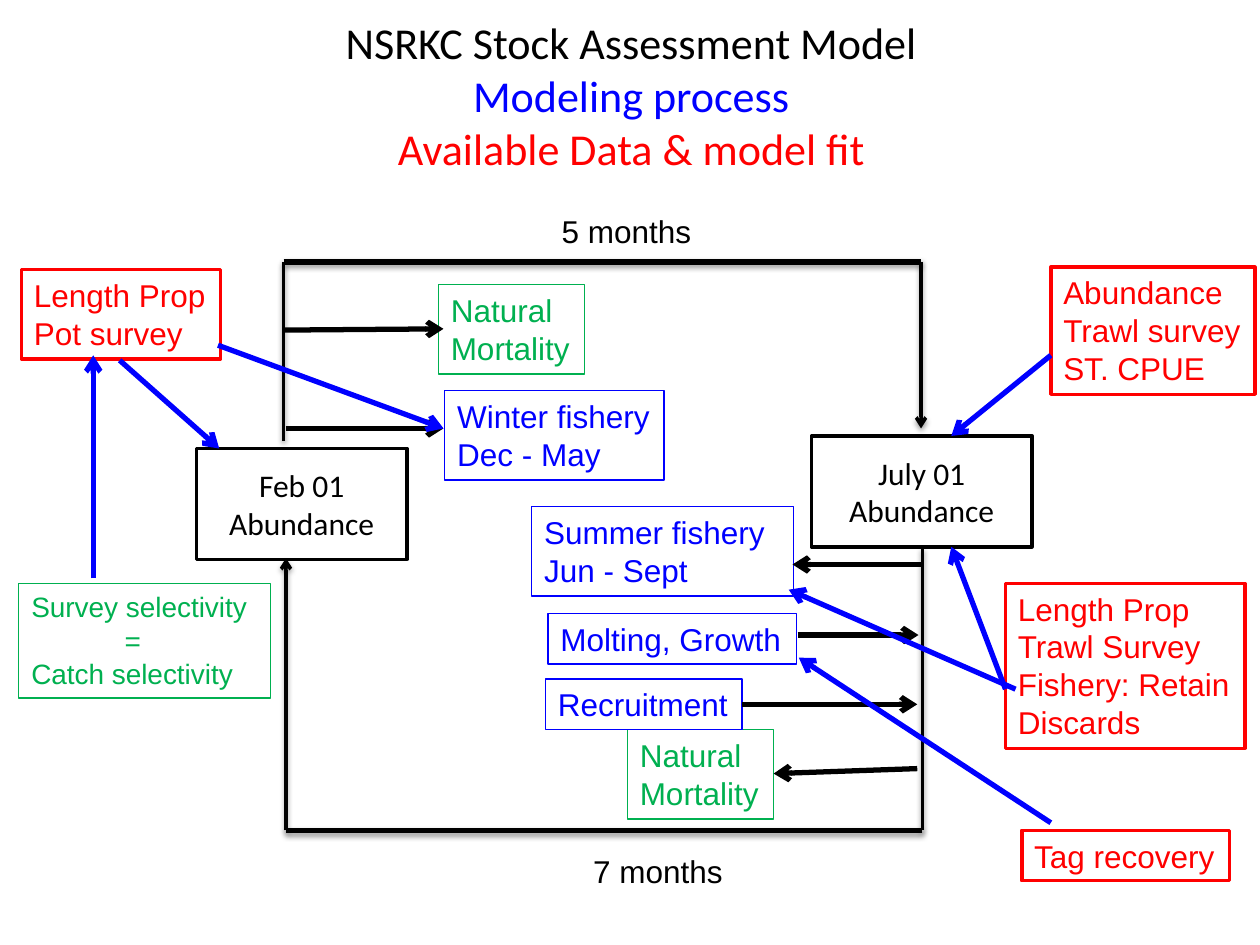
from lxml import etree
from pptx import Presentation
from pptx import util as u
from pptx.dml.color import RGBColor
from pptx.enum import shapes, text
from pptx.oxml import ns

Inches, Pt = u.Inches, u.Pt
COLORS = {"black": "000000", "blue": "0000FF", "red": "FF0000", "green": "00B050"}


def color(name):
    return RGBColor.from_string(COLORS[name])


def child(parent, tag, **attributes):
    values = {key: str(value) for key, value in attributes.items()}
    return etree.SubElement(parent, ns.qn(tag), values)


def write(shape, lines, size=18, font="Arial", ink="black", align="LEFT",
          anchor="TOP", wrap=False, grow=True, indents=None):
    """Fill a shape with one paragraph for each line."""
    frame = shape.text_frame
    frame.word_wrap = wrap
    frame.vertical_anchor = getattr(text.MSO_ANCHOR, anchor)
    fit = text.MSO_AUTO_SIZE
    frame.auto_size = fit.SHAPE_TO_FIT_TEXT if grow else fit.NONE
    for index, line in enumerate(lines):
        paragraph = frame.paragraphs[0] if index == 0 else frame.add_paragraph()
        paragraph.alignment = getattr(text.PP_ALIGN, align)
        if indents and index in indents:
            paragraph._p.get_or_add_pPr().set("marL", str(Inches(indents[index])))
        run = paragraph.add_run()
        run.text = line
        run.font.size, run.font.name = Pt(size), font
        run.font.color.rgb = color(ink)


def add_box(slide, box, lines, line="black", weight=0.75, **text_format):
    """Outlined rectangle without fill."""
    shape = slide.shapes.add_shape(shapes.MSO_SHAPE.RECTANGLE, *map(Inches, box))
    shape.shadow.inherit = False
    shape.fill.background()
    shape.line.color.rgb = color(line)
    shape.line.width = Pt(weight)
    write(shape, lines, ink=line, **text_format)


def add_line(parent, start, end, ink="black", weight=3, arrow=True, shadow=False):
    connector = parent.shapes.add_connector(
        shapes.MSO_CONNECTOR.STRAIGHT, *map(Inches, (*start, *end)))
    connector.line.color.rgb = color(ink)
    connector.line.width = Pt(weight)
    if arrow:
        child(connector.line._ln, "a:tailEnd", type="arrow")
    effects = child(connector._element.spPr, "a:effectLst")
    if shadow:
        outer = child(effects, "a:outerShdw", blurRad=Pt(3.1), dist=Pt(1.6),
                      dir=5400000, rotWithShape=0)
        child(child(outer, "a:srgbClr", val=COLORS["black"]), "a:alpha", val=38000)


def add_title(slide, box):
    title = slide.shapes.title
    title.left, title.top, title.width, title.height = map(Inches, box)
    frame = title.text_frame
    frame.auto_size = text.MSO_AUTO_SIZE.NONE
    frame.vertical_anchor = text.MSO_ANCHOR.MIDDLE
    paragraph = frame.paragraphs[0]
    paragraph.alignment = text.PP_ALIGN.CENTER
    parts = (("NSRKC Stock Assessment Model", "black"),
             ("Modeling process", "blue"),
             ("Available Data & model fit", "red"))
    for index, (line, ink) in enumerate(parts):
        if index:
            paragraph.add_line_break()
        run = paragraph.add_run()
        run.text = line
        run.font.size, run.font.name = Pt(25.2), "Calibri"
        run.font.color.rgb = color(ink)


def add_stage(slide, box, date):
    add_box(slide, box, [date, "Abundance"], weight=2, font="Calibri",
            align="CENTER", anchor="MIDDLE", wrap=True, grow=False)


def add_loop(slide, points):
    """Three-sided path whose last side ends in an arrow."""
    group = slide.shapes.add_group_shape()
    for index, (start, end) in enumerate(zip(points, points[1:])):
        add_line(group, start, end, weight=3 if index == 1 else 2,
                 arrow=index == 2, shadow=True)


def add_label(slide, box, label):
    write(slide.shapes.add_textbox(*map(Inches, box)), [label])


def add_winter_half(slide, box):
    """Upper loop, February to July."""
    left, top, width, height = box
    right = left + width
    add_loop(slide, [(left, top + height), (left, top), (right, top), (right, top + 1.32)])
    add_label(slide, (left + 2.11, top - 0.45, 1.24, 0.4), "5 months")
    add_box(slide, (left + 1.28, top + 1.02, 1.74, 0.71),
            ["Winter fishery", "Dec - May"], line="blue")
    add_box(slide, (left + 1.23, top + 0.18, 1.16, 0.71),
            ["Natural", "Mortality"], line="green")
    add_line(slide, (left + 0.02, top + 1.32), (left + 1.27, top + 1.32))
    add_line(slide, (left, top + 0.54), (left + 1.27, top + 0.53))


def add_summer_half(slide, box):
    """Lower loop, July to February."""
    left, top, width, height = box
    right, bottom = left + width, top + height
    add_loop(slide, [(right, top), (right, bottom), (left, bottom), (left, top + 0.08)])
    add_label(slide, (left + 2.34, bottom + 0.12, 1.24, 0.4), "7 months")
    processes = (
        (1.95, -0.33, 2.08, 0.71, ["Summer fishery", "Jun - Sept"], "blue", True),
        (2.08, 0.52, 1.97, 0.4, ["Molting, Growth"], "blue", False),
        (2.71, 1.44, 1.16, 0.71, ["Natural", "Mortality"], "green", False),
        (2.06, 1.04, 1.56, 0.4, ["Recruitment"], "blue", False))
    for x, y, w, h, lines, ink, wrap in processes:
        add_box(slide, (left + x, top + y, w, h), lines, line=ink, wrap=wrap)
    flows = ((5.05, 0.13, 4.02, 0.13), (4.06, 0.69, 5.02, 0.69),
             (5.01, 1.75, 3.87, 1.79), (3.62, 1.24, 5.01, 1.24))
    for x1, y1, x2, y2 in flows:
        add_line(slide, (left + x1, top + y1), (left + x2, top + y2))


def add_pot_data(slide, box):
    """Left column: pot survey data and selectivity."""
    left, top, width, height = box
    add_box(slide, (left + 0.02, top, 1.58, 0.71),
            ["Length Prop", "Pot survey"], line="red", weight=2)
    add_box(slide, (left, top + height - 0.91, width, 0.91),
            ["Survey selectivity", "=", "Catch selectivity"],
            line="green", size=16, wrap=True, indents={1: 0.74})
    links = ((0.8, 0.72, 1.59, 1.42), (1.58, 0.6, 3.37, 1.26), (0.59, 2.45, 0.59, 0.68))
    for x1, y1, x2, y2 in links:
        add_line(slide, (left + x1, top + y1), (left + x2, top + y2), ink="blue")


def add_trawl_data(slide, box):
    """Right column: trawl, fishery and tag data."""
    left, top, width, height = box
    sources = (
        (0.36, 0, 1.62, 1.01, ["Abundance", "Trawl survey", "ST. CPUE"]),
        (0, 2.51, 1.9, 1.31,
         ["Length Prop", "Trawl Survey", "Fishery: Retain", "Discards"]),
        (0.13, height - 0.4, 1.65, 0.4, ["Tag recovery"]))
    for x, y, w, h, lines in sources:
        add_box(slide, (left + x, top + y, w, h), lines, line="red", weight=2)
    links = ((0.36, 0.7, -0.43, 1.34), (0, 3.35, -0.43, 2.22),
             (0.36, 4.41, -1.64, 3.1), (0.08, 3.35, -1.72, 2.56))
    for x1, y1, x2, y2 in links:
        add_line(slide, (left + x1, top + y1), (left + x2, top + y2), ink="blue")


def main():
    presentation = Presentation()
    presentation.slide_width, presentation.slide_height = Inches(10), Inches(7.5)
    slide = presentation.slides.add_slide(presentation.slide_layouts[5])
    add_title(slide, (0.36, 0.17, 9.3, 1.17))
    add_stage(slide, (1.56, 3.56, 1.67, 0.88), "Feb 01")
    add_stage(slide, (6.44, 3.46, 1.75, 0.88), "July 01")
    add_winter_half(slide, (2.25, 2.08, 5.06, 1.42))
    add_summer_half(slide, (2.27, 4.35, 5.05, 2.24))
    add_pot_data(slide, (0.15, 2.14, 2, 3.4))
    add_trawl_data(slide, (7.98, 2.12, 1.98, 4.87))
    presentation.save("out.pptx")


if __name__ == "__main__":
    main()
